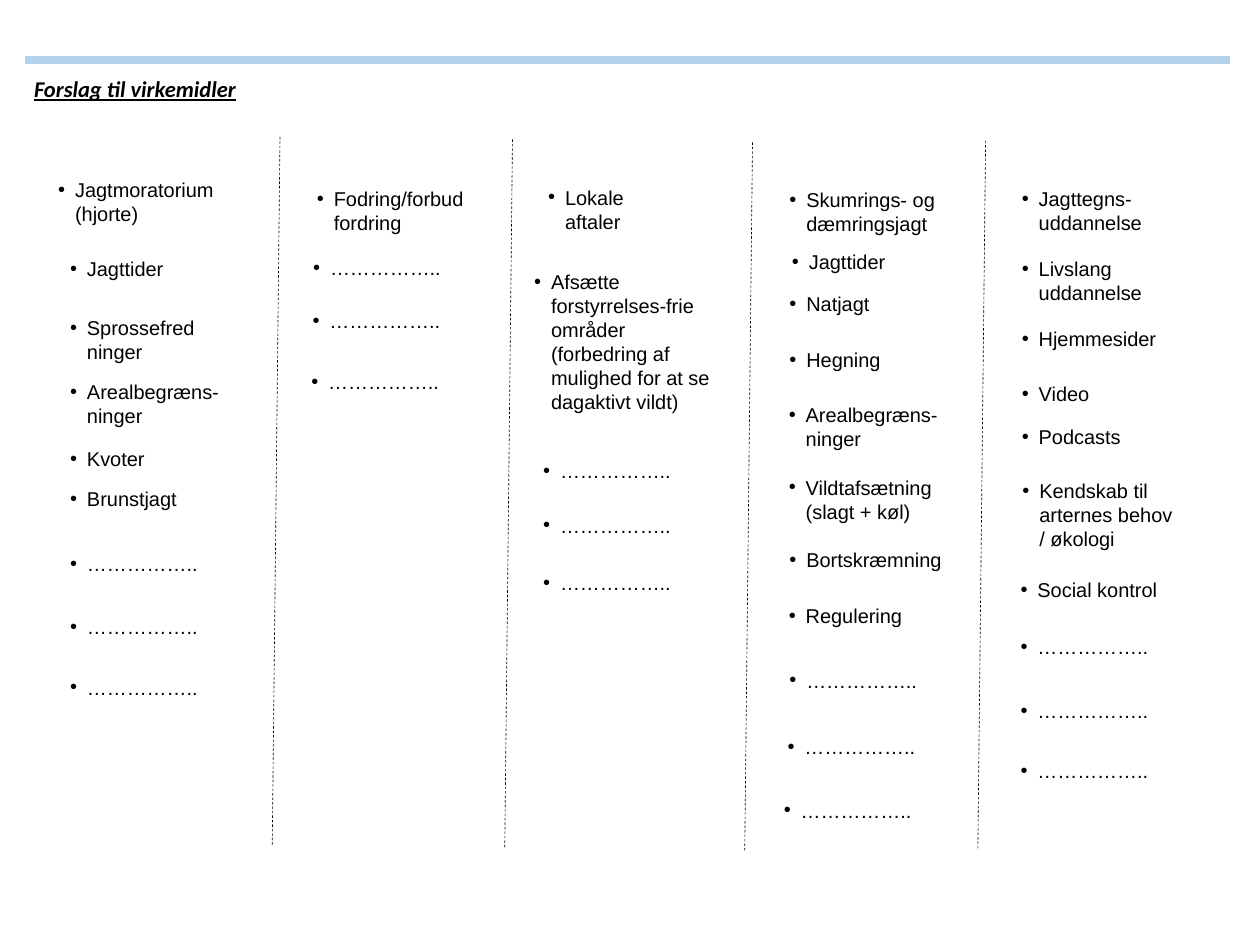
from lxml import etree
from pptx import Presentation
from pptx.dml.color import RGBColor
from pptx.enum.dml import MSO_LINE
from pptx.enum.shapes import MSO_CONNECTOR
from pptx.enum.text import MSO_ANCHOR, MSO_AUTO_SIZE, PP_ALIGN
from pptx.oxml.ns import qn
from pptx.util import Pt

STRAIGHT = MSO_CONNECTOR.STRAIGHT
DASH = MSO_LINE.DASH
TOP = MSO_ANCHOR.TOP
LEFT = PP_ALIGN.LEFT
NO_FIT = MSO_AUTO_SIZE.NONE

COLORS = {"text": "000000", "rule": "B5D2EC", "divider": "000000"}
DOTS = "…" * 5 + ".."
INDENT = 13.5
LINE_HEIGHT = 19.4
INSET = 3.6
NARROW = 119.5
COLUMN_TOP = 138
DIVIDER_DRIFT, DIVIDER_HEIGHT = -6.2, 567.5
DIVIDERS = [(224, 109.5), (410, 111.5), (602, 114), (788.5, 112.5)]

COLUMNS = [
    (49, [
        ("Jagtmoratorium (hjorte)", 0.5, 2, 145, -9.5),
        ("Jagttider", 64, 1, NARROW, 0),
        ("Sprossefredninger", 111, 2, NARROW, 0),
        ("Arealbegræns-ninger", 162, 2, 135, 0),
        ("Kvoter", 215.5, 1, 135, 0),
        ("Brunstjagt", 248, 1, 135, 0),
        (DOTS, 299.5, 1, NARROW, 0),
        (DOTS, 350, 1, NARROW, 0),
        (DOTS, 398.5, 1, NARROW, 0),
    ]),
    (243, [
        ("Fodring/forbud fordring", 7.7, 2, 132.5, 3.5),
        (DOTS, 63, 1, NARROW, 0.5),
        (DOTS, 105.5, 1, NARROW, 0),
        (DOTS, 154, 1, NARROW, -1),
    ]),
    (427.5, [
        ("Lokale aftaler", 6.5, 2, 91, 4),
        ("Afsætte forstyrrelses-frie områder (forbedring af mulighed for "
         "at se dagaktivt vildt)", 74, 6, 165.5, -7.2),
        (DOTS, 225.5, 1, NARROW, 0),
        (DOTS, 269, 1, NARROW, 0),
        (DOTS, 315, 1, NARROW, 0),
    ]),
    (624.5, [
        ("Skumrings- og dæmringsjagt", 8.5, 2, 135, 0),
        ("Jagttider", 58, 1, NARROW, 2),
        ("Natjagt", 91.5, 1, NARROW, 0),
        ("Hegning", 136.5, 1, NARROW, 0),
        ("Arealbegræns-ninger", 180.5, 2, 135, -0.5),
        ("Vildtafsætning (slagt + køl)", 238.5, 2, 143, -0.5),
        ("Bortskræmning", 296.5, 1, 143, 0),
        ("Regulering", 341.5, 1, NARROW, -0.5),
        (DOTS, 393, 1, NARROW, 0),
        (DOTS, 446, 1, NARROW, -1.5),
        (DOTS, 497, 1, NARROW, -4.5),
    ]),
    (810.4, [
        ("Jagttegns-uddannelse", 7.5, 2, 138, 0),
        ("Livslang uddannelse", 63.5, 2, 138, 0),
        ("Hjemmesider", 119.5, 1, 138, 0),
        ("Video", 163.5, 1, 138, 0),
        ("Podcasts", 198, 1, 138, 0),
        ("Kendskab til arternes behov / økologi", 241.5, 3, 138, 0.5),
        ("Social kontrol", 320.5, 1, 138, -1),
        (DOTS, 366, 1, NARROW, -1),
        (DOTS, 417.3, 1, NARROW, -1),
        (DOTS, 465.5, 1, NARROW, -1),
    ]),
]


def write(tf, text, size=16, font="Arial", color="text", bullet=False,
          bold=False, italic=False, underline=False):
    tf.word_wrap = True
    tf.auto_size = NO_FIT
    tf.vertical_anchor = TOP
    tf.margin_left = tf.margin_right = Pt(2 * INSET)
    tf.margin_top = tf.margin_bottom = Pt(INSET)
    p = tf.paragraphs[0]
    p.alignment = LEFT
    p.line_spacing = 1.0
    p.space_before = Pt(0)
    if bullet:
        pPr = p._p.get_or_add_pPr()
        pPr.set("marL", str(Pt(INDENT)))
        pPr.set("indent", str(-Pt(INDENT)))
        etree.SubElement(pPr, qn("a:buFont")).set("typeface", "Arial")
        etree.SubElement(pPr, qn("a:buChar")).set("char", "•")
    r = p.add_run()
    r.text = text
    f = r.font
    f.size, f.name = Pt(size), font
    f.bold, f.italic, f.underline = bold, italic, underline
    f.color.rgb = RGBColor.from_string(COLORS[color])


def add_line(s, x1, y1, x2, y2, color, width, dash=None):
    c = s.shapes.add_connector(STRAIGHT, Pt(x1), Pt(y1), Pt(x2), Pt(y2))
    c.line.color.rgb = RGBColor.from_string(COLORS[color])
    c.line.width = Pt(width)
    if dash is not None:
        c.line.dash_style = dash
    etree.SubElement(c._element.spPr, qn("a:effectLst"))


def add_header(s, left, top, width):
    add_line(s, left, top, left + width, top, "rule", 6.5)
    sp = s.shapes.title
    sp.left, sp.top, sp.width, sp.height = Pt(left), Pt(top + 8.5), Pt(178), Pt(29)
    write(sp.text_frame, "Forslag til virkemidler", size=18, font="Calibri",
          bold=True, italic=True, underline=True)


def add_column(s, left, top, items):
    for text, dy, lines, width, dx in items:
        sp = s.shapes.add_textbox(Pt(left + dx), Pt(top + dy), Pt(width),
                                  Pt(lines * LINE_HEIGHT + 2 * INSET))
        write(sp.text_frame, text, bullet=True)


def add_dividers(s):
    for x, y in DIVIDERS:
        add_line(s, x, y, x + DIVIDER_DRIFT, y + DIVIDER_HEIGHT,
                 "divider", 0.5, DASH)


def main():
    prs = Presentation()
    prs.slide_width, prs.slide_height = Pt(1008), Pt(756)
    s = prs.slides.add_slide(prs.slide_layouts[5])
    add_header(s, 20, 48.2, 963.8)
    add_dividers(s)
    for left, items in COLUMNS:
        add_column(s, left, COLUMN_TOP, items)
    prs.save("out.pptx")


if __name__ == "__main__":
    main()
